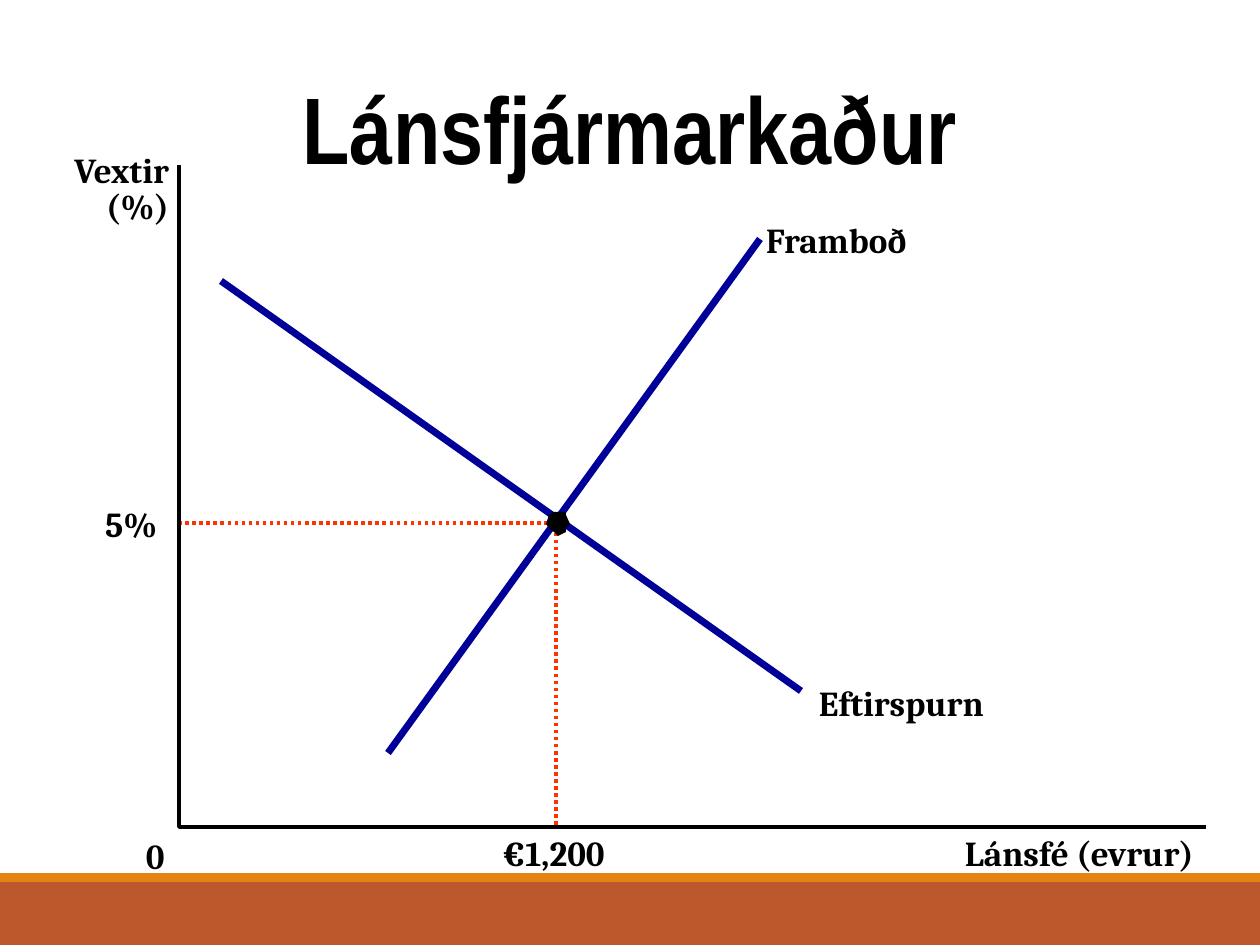
from pptx import Presentation
from pptx.dml.color import RGBColor
from pptx.enum.dml import MSO_LINE
from pptx.enum.shapes import MSO_CONNECTOR, MSO_SHAPE
from pptx.enum.text import MSO_ANCHOR, PP_ALIGN
from pptx.oxml.ns import qn
from pptx.util import Emu, Pt
from lxml.etree import SubElement

SCALE = 914400 / 126
COLORS = {"ink": "000000", "curve": "000099", "guide": "FF3300",
          "band": "BD582C", "stripe": "E48312"}


def px(*lengths):
    return [Emu(round(length * SCALE)) for length in lengths]


def add_text(place, lines, align=PP_ALIGN.LEFT, spacing=None, wrap=False,
             font="Cambria", size=20, insets=(0, 0), anchor=MSO_ANCHOR.TOP):
    frame = page.shapes.add_textbox(*px(*place)).text_frame
    frame.word_wrap = wrap
    frame.vertical_anchor = anchor
    frame.margin_left = frame.margin_right = px(insets[0])[0]
    frame.margin_top = frame.margin_bottom = px(insets[1])[0]
    for index, line in enumerate(lines):
        para = frame.add_paragraph() if index else frame.paragraphs[0]
        para.alignment = align
        para.line_spacing = spacing
        span = para.add_run()
        span.text = line
        span.font.name = font
        span.font.size = Pt(size)
        span.font.bold = True
        span.font.color.rgb = RGBColor.from_string(COLORS["ink"])


deck = Presentation()
deck.slide_width, deck.slide_height = px(1260, 945)
page = deck.slides.add_slide(deck.slide_layouts[6])

# Footer bands
for color, top, height in (("band", 882, 63), ("stripe", 873, 9)):
    band = page.shapes.add_shape(MSO_SHAPE.RECTANGLE, *px(0, top, 1260, height))
    band.shadow.inherit = False
    band.fill.solid()
    band.fill.fore_color.rgb = RGBColor.from_string(COLORS[color])
    band.line.fill.background()

# Axis captions
add_text((840, 838, 354, 37), ["Lánsfé (evrur)"], PP_ALIGN.RIGHT, 0.85, True)
add_text((0, 155, 169, 72), ["Vextir", "(%)"], PP_ALIGN.RIGHT, 0.85, True)

# Curve names and axis values
for label, left, top, width in (
        ("0", 146, 834, 21), ("Eftirspurn", 819, 681, 175),
        ("Framboð", 766, 218, 146), ("5%", 105, 502, 55),
        ("€1,200", 503, 831, 115)):
    add_text((left, top, width, 43), [label])

# Demand and supply curves
for ends in ((801, 691, 221, 281), (388, 753, 760, 239)):
    curve = page.shapes.add_connector(MSO_CONNECTOR.STRAIGHT, *px(*ends))
    curve.line.color.rgb = RGBColor.from_string(COLORS["curve"])
    curve.line.width = Pt(4)
    SubElement(curve._element.spPr, qn("a:effectLst"))

# Dotted guides, equilibrium point and axes
guides = [(556, 825), (556, 523), (179, 523)]
point = [(558, 536), (566, 532), (566, 528), (570, 524), (566, 515),
         (566, 512), (558, 512), (554, 512), (549, 515), (546, 524),
         (549, 528), (554, 532)]
axes = [(179, 165), (179, 827), (1206, 827)]
for corners, color, dash, closed in (
        (guides, "guide", MSO_LINE.ROUND_DOT, False),
        (point, "ink", None, True), (axes, "ink", None, False)):
    builder = page.shapes.build_freeform(*corners[0], scale=SCALE)
    builder.add_line_segments(corners[1:], close=closed)
    outline = builder.convert_to_shape()
    outline.shadow.inherit = False
    if closed:
        outline.fill.solid()
        outline.fill.fore_color.rgb = RGBColor.from_string(COLORS[color])
        outline.line.fill.background()
    else:
        outline.fill.background()
        outline.line.color.rgb = RGBColor.from_string(COLORS[color])
        outline.line.width = Pt(2)
        outline.line.dash_style = dash

# Title
add_text((147, 63, 966, 127), ["Lánsfjármarkaður"], PP_ALIGN.CENTER, wrap=True,
         font="Arial Narrow", size=54, insets=(13, 6), anchor=MSO_ANCHOR.MIDDLE)

deck.save("out.pptx")
